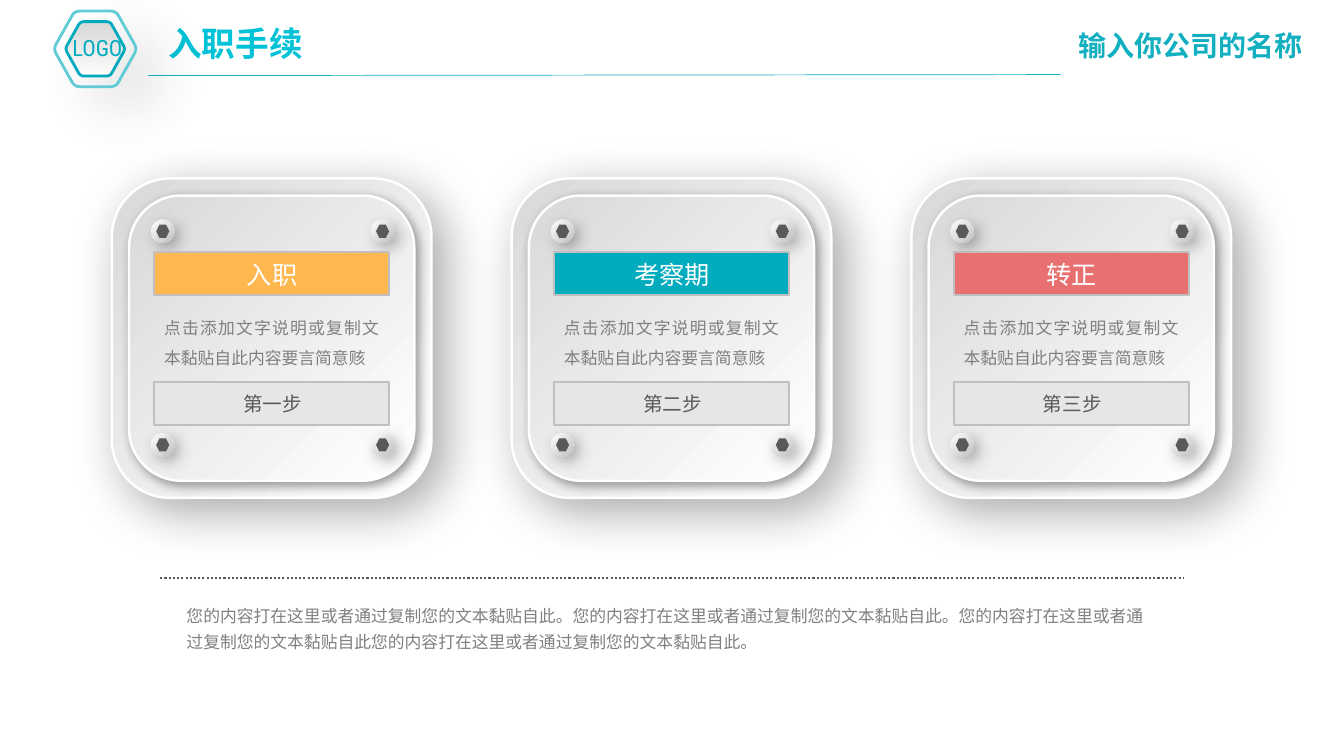
from math import ceil
from lxml.etree import SubElement
from pptx import Presentation
from pptx.dml.color import RGBColor
from pptx.enum.dml import MSO_LINE
from pptx.enum.shapes import MSO_CONNECTOR, MSO_SHAPE
from pptx.enum.text import MSO_ANCHOR, MSO_AUTO_SIZE, PP_ALIGN
from pptx.oxml.ns import qn
from pptx.util import Inches, Pt

WHITE = RGBColor(0xFF, 0xFF, 0xFF)
NEAR_WHITE = RGBColor(0xFE, 0xFE, 0xFE)
PALE = RGBColor(0xE6, 0xE6, 0xE6)
LIGHT = RGBColor(0xD9, 0xD9, 0xD9)
SILVER = RGBColor(0xBF, 0xBF, 0xBF)
GREY = RGBColor(0x80, 0x80, 0x80)
DARK = RGBColor(0x59, 0x59, 0x59)
TEAL = RGBColor(0x01, 0xAC, 0xBE)
SOFT_TEAL = RGBColor(0x61, 0xCB, 0xD6)
HEADER_TEAL = RGBColor(0x12, 0xAF, 0xC0)
TITLE_TEAL = RGBColor(0x01, 0xC2, 0xD6)
ORANGE = RGBColor(0xFF, 0xB8, 0x50)
CORAL = RGBColor(0xE8, 0x70, 0x71)

CJK = "Noto Sans CJK SC"
LATIN = "Roboto Condensed"

STEPS = [("入职", "第一步", ORANGE), ("考察期", "第二步", TEAL), ("转正", "第三步", CORAL)]
STEP_TEXT = "点击添加文字说明或复制文本黏贴自此内容要言简意赅"
SENTENCE = "您的内容打在这里或者通过复制您的文本黏贴自此"
SUMMARY = f"{SENTENCE}。{SENTENCE}。{SENTENCE}{SENTENCE}。"

CARD_LEFT, CARD_PITCH = 1.11, 3.965


def add_shadow(shape, alpha, blur, dist, angle=45):
    """Outer black shadow: alpha in percent, blur and distance in points."""
    effects = shape._element.spPr.find(qn("a:effectLst"))
    shadow = SubElement(effects, qn("a:outerShdw"), blurRad=str(Pt(blur)), dist=str(Pt(dist)),
                        dir=str(angle * 60000), algn="tl", rotWithShape="0")
    color = SubElement(shadow, qn("a:srgbClr"), val="000000")
    SubElement(color, qn("a:alpha"), val=str(alpha * 1000))


def style(shape, fill=None, line=None, width=1.0, angle=315):
    """Fill is None, one colour, or a list of two gradient colours."""
    shape.shadow.inherit = False
    if fill is None:
        shape.fill.background()
    elif isinstance(fill, list):
        shape.fill.gradient()
        shape.fill.gradient_angle = angle
        for stop, color in zip(shape.fill.gradient_stops, fill):
            stop.color.rgb = color
    else:
        shape.fill.solid()
        shape.fill.fore_color.rgb = fill
    if line is None:
        shape.line.fill.background()
    else:
        shape.line.color.rgb = line
        shape.line.width = Pt(width)


def add_box(shapes, kind, x, y, w, h, **look):
    sp = shapes.add_shape(kind, Inches(x), Inches(y), Inches(w), Inches(h))
    style(sp, **look)
    return sp


def write(tf, text, size, color, font=CJK, bold=False, align=PP_ALIGN.LEFT, spacing=None):
    tf.word_wrap = True
    p = tf.paragraphs[0]
    p.alignment = align
    if spacing:
        p.line_spacing = spacing
    r = p.add_run()
    r.text = text
    r.font.size = Pt(size)
    r.font.bold = bold
    r.font.color.rgb = color
    r.font.name = font
    SubElement(r._r.get_or_add_rPr(), qn("a:ea"), typeface=CJK)


def add_text(shapes, x, y, w, h, text, size, color, **look):
    tf = shapes.add_textbox(Inches(x), Inches(y), Inches(w), Inches(h)).text_frame
    write(tf, text, size, color, **look)
    tf.auto_size = MSO_AUTO_SIZE.SHAPE_TO_FIT_TEXT
    return tf


def add_line(shapes, x1, y1, x2, y2, color, width, dash=None):
    ln = shapes.add_connector(MSO_CONNECTOR.STRAIGHT, Inches(x1), Inches(y1), Inches(x2), Inches(y2))
    ln.line.color.rgb = color
    ln.line.width = Pt(width)
    if dash:
        ln.line.dash_style = dash
    SubElement(ln._element.spPr, qn("a:effectLst"))


def add_rounded_hexagon(shapes, cx, cy, scale, **look):
    """Hexagon whose corners are quadratic curves starting an eighth along each side."""
    corners = [(cx + scale * dx, cy + scale * dy) for dx, dy in (
        (-0.205, -0.375), (0.205, -0.375), (0.415, 0),
        (0.205, 0.375), (-0.205, 0.375), (-0.415, 0))]
    points = []
    for i, (x, y) in enumerate(corners):
        (px, py), (nx, ny) = corners[i - 1], corners[(i + 1) % 6]
        for t in (0, 0.2, 0.4, 0.6, 0.8, 1):
            back, ahead = 0.125 * (1 - t) ** 2, 0.125 * t ** 2
            points.append((Inches(x + back * (px - x) + ahead * (nx - x)),
                           Inches(y + back * (py - y) + ahead * (ny - y))))
    builder = shapes.build_freeform(*points[0])
    builder.add_line_segments(points[1:], close=True)
    sp = builder.convert_to_shape()
    style(sp, **look)
    add_shadow(sp, 15, 45, 27, 38)


def add_logo(s):
    shapes = s.shapes.add_group_shape().shapes
    add_rounded_hexagon(shapes, 0.945, 0.485, 0.72, fill=[LIGHT, NEAR_WHITE],
                        line=TEAL, width=2, angle=270)
    add_rounded_hexagon(shapes, 0.945, 0.485, 1, line=SOFT_TEAL, width=2)
    add_text(shapes, 0.62, 0.29, 0.85, 0.37, "LOGO", 16, TEAL, font=LATIN)


def add_header(s):
    add_logo(s)
    add_line(s.shapes, 1.47, 0.75, 10.52, 0.74, HEADER_TEAL, 0.5)
    add_text(s.shapes, 10.6, 0.23, 2.73, 0.46, "输入你公司的名称", 20, HEADER_TEAL, bold=True)
    title = s.shapes.title
    title.left, title.top, title.width, title.height = map(Inches, (1.57, 0.18, 3.16, 0.53))
    title.text_frame.vertical_anchor = MSO_ANCHOR.TOP
    write(title.text_frame, "入职手续", 24, TITLE_TEAL, font=LATIN, bold=True)


def add_bolt(shapes, x, y):
    head = add_box(shapes, MSO_SHAPE.OVAL, x, y, 0.23, 0.23, fill=[WHITE, SILVER])
    add_shadow(head, 29, 11, 5)
    add_box(shapes, MSO_SHAPE.HEXAGON, x + 0.05, y + 0.05, 0.13, 0.13, fill=DARK)


def add_card(s, x, heading, step, color):
    shapes = s.shapes.add_group_shape().shapes
    for inset, shadow in ((0, (35, 37, 12)), (0.17, (40, 8, 3))):
        side = 3.17 - 2 * inset
        plate = add_box(shapes, MSO_SHAPE.ROUNDED_RECTANGLE, x + inset, 1.77 + inset, side, side,
                        fill=[LIGHT, WHITE], line=WHITE, width=1.75)
        plate.adjustments[0] = 0.183
        add_shadow(plate, *shadow)
    for y in (2.18, 4.3):
        for dx in (0.39, 2.57):
            add_bolt(shapes, x + dx, y)
    left = x + 0.42
    add_box(shapes, MSO_SHAPE.RECTANGLE, left, 2.5, 2.33, 0.43, fill=color, line=SILVER, width=1.25)
    add_text(shapes, left + 0.32, 2.52, 1.7, 0.4, heading, 18, WHITE, align=PP_ALIGN.CENTER)
    add_text(shapes, left, 3, 2.33, 0.71, STEP_TEXT, 12, GREY, align=PP_ALIGN.JUSTIFY, spacing=1.5)
    add_box(shapes, MSO_SHAPE.RECTANGLE, left, 3.79, 2.33, 0.43, fill=PALE, line=SILVER, width=1.25)
    add_text(shapes, left + 0.15, 3.84, 2.05, 0.35, step, 14, DARK, align=PP_ALIGN.CENTER)


def add_summary(s):
    add_line(s.shapes, 1.59, 5.73, 11.74, 5.73, DARK, 1.5, MSO_LINE.ROUND_DOT)
    tf = add_text(s.shapes, 1.78, 5.91, 9.76, 0.6, SUMMARY, 12, GREY, spacing=1.3)
    tf.margin_left = tf.margin_right = Inches(0.07)
    tf.margin_top = tf.margin_bottom = Inches(0.04)


def main():
    prs = Presentation()
    prs.slide_width, prs.slide_height = Inches(13.33), Inches(7.5)
    s = prs.slides.add_slide(prs.slide_layouts[5])
    add_header(s)
    for i, (heading, step, color) in enumerate(STEPS):
        add_card(s, CARD_LEFT + i * CARD_PITCH, heading, step, color)
    add_summary(s)
    prs.save("out.pptx")


if __name__ == "__main__":
    main()
